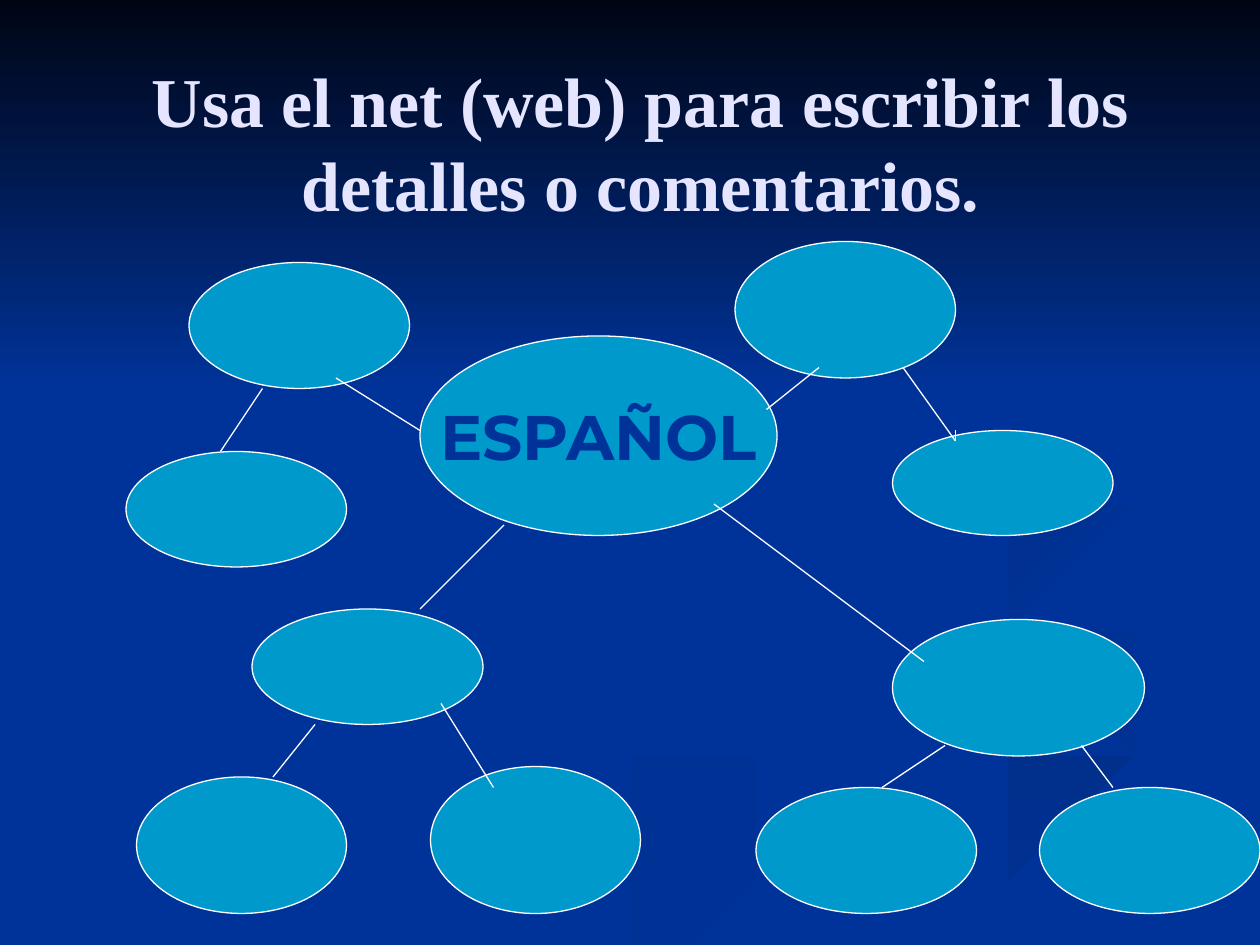
import pptx
import pptx.dml.color
import pptx.enum.shapes
import pptx.enum.text
import pptx.oxml
import pptx.util

COLUMNS, ROWS = 120, 90
BLUE, CYAN, WHITE, LAVENDER = "003399", "0099CC", "FFFFFF", "E5E5FF"

TITLE = "Usa el net (web) para escribir los detalles o comentarios."
TITLE_BOX = (10, 0, 102, 27)
TOPIC = "ESPAÑOL"
TOPIC_BUBBLE = (40, 32, 34, 19)
SKY_BOX = (0, 0, COLUMNS, 37)

BUBBLES = [
    (70, 23, 21, 13), (85, 41, 21, 10),
    (18, 25, 21, 12), (12, 43, 21, 11),
    (24, 58, 22, 11), (13, 74, 20, 13), (41, 73, 20, 14),
    (85, 59, 24, 13), (72, 75, 21, 12), (99, 75, 21, 12),
]

LINKS = [
    (30, 69, 26, 74), (42, 67, 47, 75), (90, 71, 84, 75), (103, 71, 106, 75),
    (86, 35, 91, 42), (91, 42, 91, 41), (78, 35, 73, 39), (32, 36, 40, 41),
    (25, 37, 21, 43), (48, 50, 40, 58), (68, 48, 88, 63),
]

SWIRLS = [
    ((BLUE, "003193"), 0, [
        (7.8, 5.53), (6.4, 5.07), (5.75, 4.6), (6.3, 5.05), (7.8, 5.56),
        (7.5, 5.94), (5.4, 6.49), (3, 7.49), (3.6, 7.49), (5.3, 6.74), (7.8, 6.05)]),
    ((BLUE, "003193"), 45, [
        (9.4, 5.64), (8.3, 5.19), (7.24, 4.64), (8.2, 5.3), (9.17, 5.76),
        (8.94, 6.05), (9.4, 5.83)]),
    (("002F8C", BLUE), 90, [
        (5.03, 7.49), (5.7, 7.49), (7.2, 6.82), (9.98, 6.09), (9.98, 5.81),
        (8, 6.38), (6.3, 6.93)]),
    ((BLUE, BLUE), 0, [
        (7.25, 4.64), (8.3, 5.19), (9.43, 5.7), (8.1, 6.25), (6.2, 6.84), (4.77, 7.49),
        (5.2, 7.47), (7, 6.69), (9.99, 5.81), (9.99, 5.38), (8.5, 5.03), (7.81, 4.63),
        (8.6, 4.24), (9.99, 4.02), (9.99, 3.87), (8.1, 4.17)]),
    (("003091", BLUE), 45, [
        (7.81, 4.6), (8.26, 4.96), (8.05, 4.72), (8.8, 4.39), (9.98, 4.2),
        (9.98, 4.02), (8.5, 4.27)]),
    (("002F8E", BLUE), 45, [
        (6.8, 4.3), (8.4, 3.96), (8.94, 3.4), (8.4, 2.75), (7.62, 2.33), (8.5, 2.85),
        (8.89, 3.35), (8.2, 3.86), (6.2, 4.26), (5.8, 4.7), (6.22, 5), (5.94, 4.65)]),
]

presentation = pptx.Presentation()
presentation.slide_width = pptx.util.Inches(10)
presentation.slide_height = pptx.util.Inches(7.5)
slide = presentation.slides.add_slide(presentation.slide_layouts[6])


def color(value):
    return pptx.dml.color.RGBColor.from_string(value)


def on_grid(*cells):
    units = (presentation.slide_width // COLUMNS, presentation.slide_height // ROWS)
    return [cell * units[index % 2] for index, cell in enumerate(cells)]


def write_text(shape, text, size, font, fill, wrap):
    frame = shape.text_frame
    frame.word_wrap = wrap
    frame.vertical_anchor = pptx.enum.text.MSO_ANCHOR.MIDDLE
    paragraph = frame.paragraphs[0]
    paragraph.alignment = pptx.enum.text.PP_ALIGN.CENTER
    run = paragraph.add_run()
    run.text = text
    run.font.size = pptx.util.Pt(size)
    run.font.name = font
    run.font.bold = True
    run.font.color.rgb = color(fill)


def style_line(line):
    line.color.rgb = color(WHITE)
    line.width = pptx.util.Pt(0.75)


def paint_gradient(shape, colors, angle):
    shape.shadow.inherit = False
    shape.line.fill.background()
    shape.fill.gradient()
    shape.fill.gradient_angle = -angle % 360
    for stop, value in zip(shape.fill.gradient_stops, colors):
        stop.color.rgb = color(value)


def smooth_outline(points, steps=5):
    limits = (presentation.slide_width.inches, presentation.slide_height.inches)
    outline = []
    for index, start in enumerate(points):
        before, end, after = (points[(index + shift) % len(points)] for shift in (-1, 1, 2))
        for step in range(steps):
            t = step / steps
            outline.append(tuple(
                min(limit, b + (c - a) * t / 2
                    + (2 * a - 5 * b + 4 * c - d) * t ** 2 / 2
                    + (3 * b - a - 3 * c + d) * t ** 3 / 2)
                for a, b, c, d, limit in zip(before, start, end, after, limits)))
    return outline


def add_swirl(colors, angle, points):
    outline = smooth_outline(points)
    builder = slide.shapes.build_freeform(*outline[0], scale=pptx.util.Inches(1))
    builder.add_line_segments(outline[1:], close=True)
    paint_gradient(builder.convert_to_shape(), colors, angle)


def add_bubble(cells):
    shape = slide.shapes.add_shape(pptx.enum.shapes.MSO_SHAPE.OVAL, *on_grid(*cells))
    shape.shadow.inherit = False
    shape.fill.solid()
    shape.fill.fore_color.rgb = color(CYAN)
    style_line(shape.line)
    return shape


def add_link(cells):
    connector = slide.shapes.add_connector(
        pptx.enum.shapes.MSO_CONNECTOR.STRAIGHT, *on_grid(*cells))
    style_line(connector.line)
    connector._element.spPr.append(pptx.oxml.parse_xml(
        '<a:effectLst xmlns:a="http://schemas.openxmlformats.org/drawingml/2006/main"/>'))


slide.background.fill.solid()
slide.background.fill.fore_color.rgb = color(BLUE)
for colors, angle, points in SWIRLS:
    add_swirl(colors, angle, points)
sky = slide.shapes.add_shape(pptx.enum.shapes.MSO_SHAPE.RECTANGLE, *on_grid(*SKY_BOX))
paint_gradient(sky, ("000514", BLUE), 90)

title = slide.shapes.add_textbox(*on_grid(*TITLE_BOX))
write_text(title, TITLE, size=40, font="Times New Roman", fill=LAVENDER, wrap=True)
topic = add_bubble(TOPIC_BUBBLE)
write_text(topic, TOPIC, size=36, font="Montserrat", fill=BLUE, wrap=False)

for cells in BUBBLES:
    add_bubble(cells)
for cells in LINKS:
    add_link(cells)

presentation.save("out.pptx")
